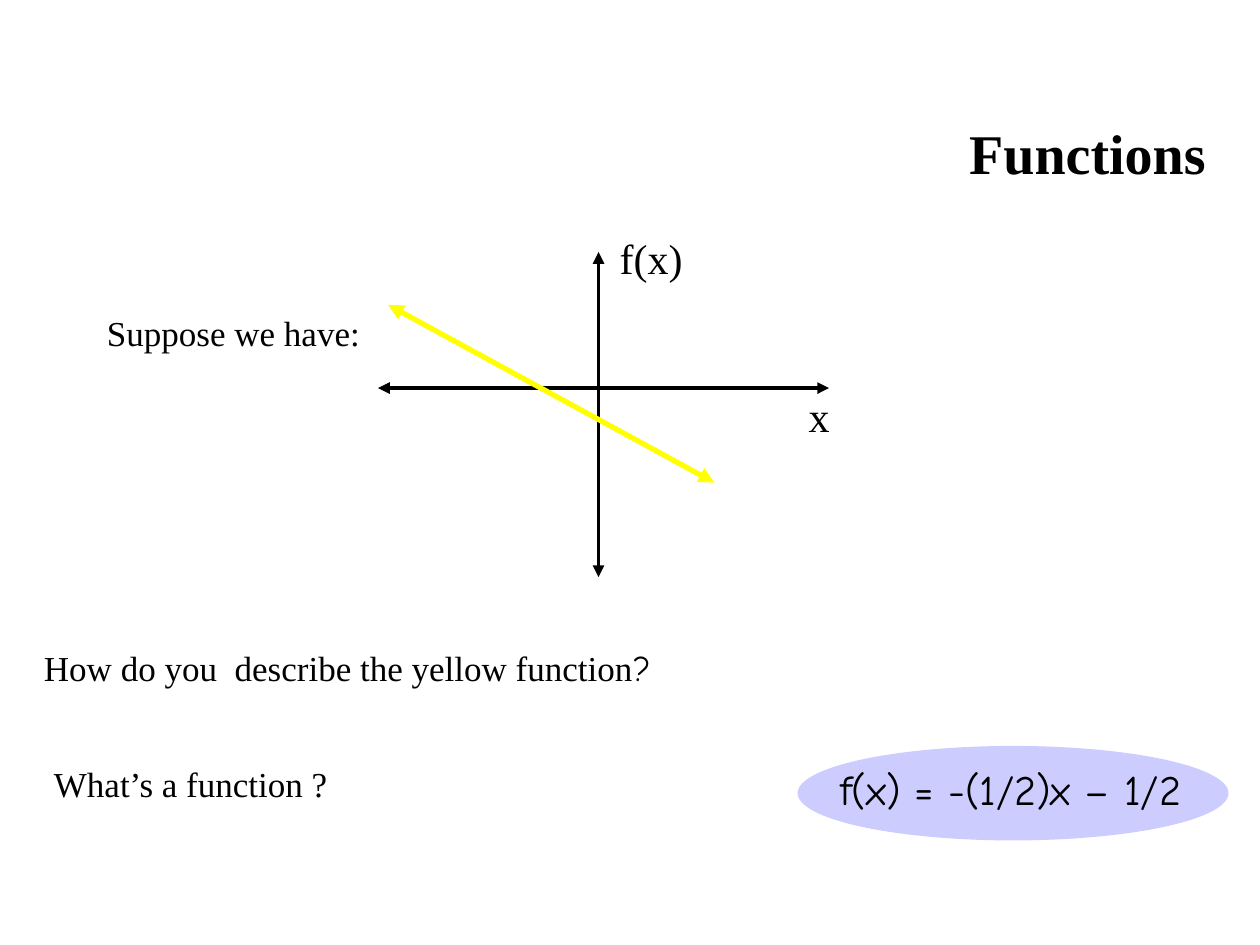
"""Build a slide that asks how to describe a line drawn on a pair of axes."""
from dataclasses import dataclass

from lxml.etree import SubElement
from pptx import Presentation
from pptx.dml.color import RGBColor
from pptx.enum.shapes import MSO_CONNECTOR, MSO_SHAPE
from pptx.enum.text import MSO_ANCHOR, MSO_AUTO_SIZE, PP_ALIGN
from pptx.oxml.ns import qn
from pptx.util import Inches, Pt

COLORS = {"ink": "000000", "function": "FFFF00", "answer": "CCCCFF"}
SERIF, HAND = "Times New Roman", "Comic Neue"


@dataclass
class Label:
    box: tuple[float, float, float, float]
    runs: list[tuple[str, str]]
    size: int = 20
    bold: bool = False
    align: PP_ALIGN = PP_ALIGN.LEFT
    anchor: MSO_ANCHOR = MSO_ANCHOR.TOP
    bottom: float = 0.05
    wrap: bool = True
    grow: bool = False


@dataclass
class Arrow:
    start: tuple[float, float]
    end: tuple[float, float]
    color: str = "ink"
    width: float = 2.25


TEXTS = [
    Label((1.17, 0.33, 8.5, 1.25), [("Functions", SERIF)], size=32, bold=True,
          align=PP_ALIGN.RIGHT, anchor=MSO_ANCHOR.BOTTOM, bottom=0.11),
    Label((0.75, 2.42, 8.5, 4.5), [("Suppose we have:", SERIF)]),
    Label((0.25, 5.08, 7.75, 0.58),
          [("How do you  describe the yellow function", SERIF), ("?", HAND)]),
    Label((0.33, 6, 6.33, 0.58), [("What’s a function ?", SERIF)]),
]
ANSWER = Label((6.33, 6.01, 3.38, 0.5), [("f(x) = -(1/2)x – 1/2", HAND)],
               size=24, align=PP_ALIGN.CENTER, grow=True)
ARROWS = [
    Arrow((4.75, 2), (4.75, 4.58)),
    Arrow((6.58, 3.08), (3, 3.08)),
    Arrow((5.67, 3.83), (3.08, 2.42), "function", 3),
]
AXIS_NAMES = [
    Label((6.32, 3.05, 0.37, 0.5), [("x", SERIF)], size=24, wrap=False, grow=True),
    Label((4.82, 1.8, 0.7, 0.5), [("f(x)", SERIF)], size=24, wrap=False, grow=True),
]


def rgb(name: str) -> RGBColor:
    return RGBColor.from_string(COLORS[name])


def add_label(shapes, label: Label) -> None:
    sp = shapes.add_textbox(*map(Inches, label.box))
    tf = sp.text_frame
    tf.word_wrap = label.wrap
    tf.auto_size = MSO_AUTO_SIZE.SHAPE_TO_FIT_TEXT if label.grow else MSO_AUTO_SIZE.NONE
    tf.vertical_anchor = label.anchor
    tf.margin_bottom = Inches(label.bottom)
    p = tf.paragraphs[0]
    p.alignment = label.align
    for text, font in label.runs:
        r = p.add_run()
        r.text = text
        r.font.name = font
        r.font.size = Pt(label.size)
        r.font.bold = label.bold
        r.font.color.rgb = rgb("ink")


def add_arrow(shapes, arrow: Arrow) -> None:
    line = shapes.add_connector(MSO_CONNECTOR.STRAIGHT,
                                *map(Inches, arrow.start + arrow.end))
    line.line.color.rgb = rgb(arrow.color)
    line.line.width = Pt(arrow.width)
    ln = line.line._get_or_add_ln()
    for tag in ("a:headEnd", "a:tailEnd"):
        SubElement(ln, qn(tag), type="triangle")
    SubElement(line._element.spPr, qn("a:effectLst"))


def add_answer(shapes) -> None:
    group = shapes.add_group_shape()
    oval = group.shapes.add_shape(MSO_SHAPE.OVAL, *map(Inches, (6.33, 5.92, 3.42, 0.75)))
    oval.shadow.inherit = False
    oval.fill.solid()
    oval.fill.fore_color.rgb = rgb("answer")
    oval.line.fill.background()
    add_label(group.shapes, ANSWER)


def main() -> None:
    prs = Presentation()
    prs.slide_width, prs.slide_height = Inches(10), Inches(7.5)
    s = prs.slides.add_slide(prs.slide_layouts[6])
    for label in TEXTS:
        add_label(s.shapes, label)
    add_answer(s.shapes)
    for arrow in ARROWS:
        add_arrow(s.shapes, arrow)
    for label in AXIS_NAMES:
        add_label(s.shapes, label)
    prs.save("out.pptx")


if __name__ == "__main__":
    main()
